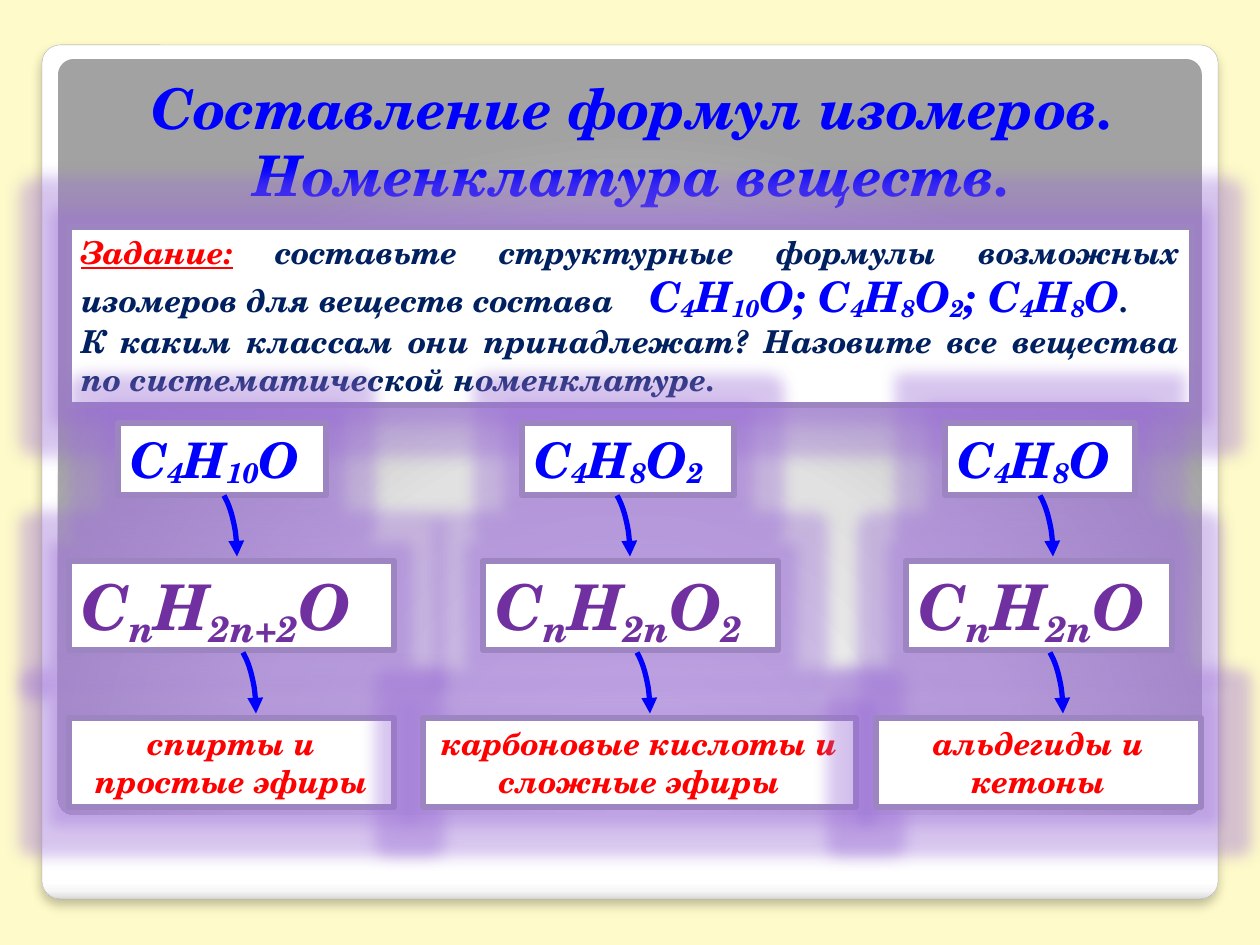
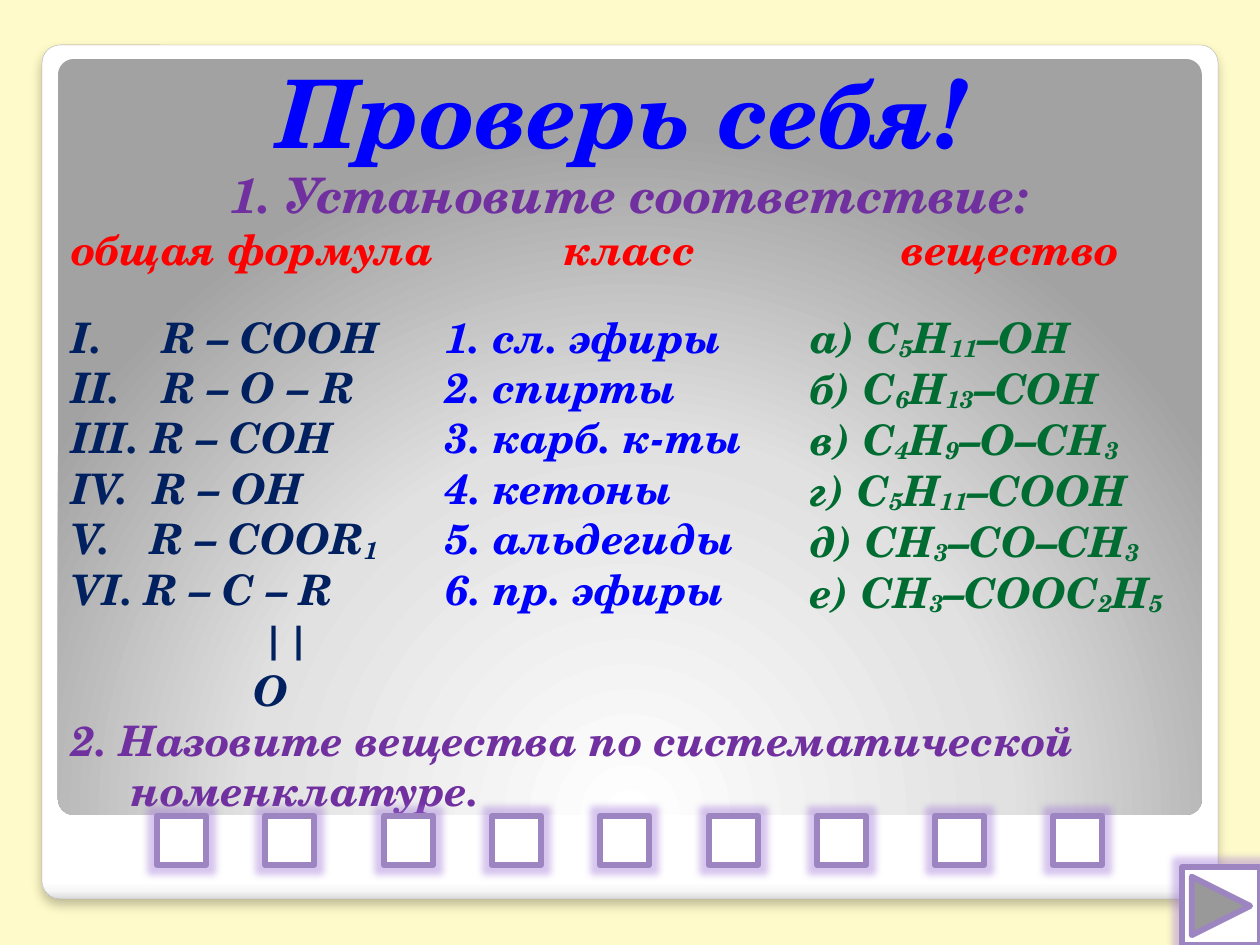
"""Build two chemistry slides: isomer formulas by class, and a matching self-test."""
import pptx
import pptx.dml.color
import pptx.enum.shapes
import pptx.enum.text
import pptx.oxml
import pptx.oxml.ns
import pptx.util

PX_PER_INCH = 126
FONT = "TeX Gyre Schola"
CREAM, WHITE, LILAC, GLOW, EDGE = "FEFAC9", "FFFFFF", "9C85C0", "9B6FD6", "A4A4A4"
BLUE, NAVY, VIOLET, RED, GREEN = "0000FF", "002060", "7030A0", "FF0000", "006C31"
KIND = pptx.enum.shapes.MSO_SHAPE
ALIGN = {
    "left": pptx.enum.text.PP_ALIGN.LEFT,
    "center": pptx.enum.text.PP_ALIGN.CENTER,
    "justify": pptx.enum.text.PP_ALIGN.JUSTIFY,
}

PANEL = (42, 45, 1176, 854)
BAND = (58, 59, 1144, 756)
PANEL_STOPS = [(0, "FFFFFF"), (98, "FFFFFF"), (99, "F7F7F7"), (100, "DADADA")]
BAND_STOPS = [(0, "FFFFFF"), (55, "E1E1E1"), (100, "A2A2A2")]

ISOMERS_TITLE = "Составление формул изомеров. Номенклатура веществ."
TASK = [
    [
        ("Задание:", {"color": RED, "underline": True}),
        (" составьте структурные формулы возможных изомеров для веществ состава\t", {}),
        ("С_4_Н_10_О; С_4_Н_8_О_2_; С_4_Н_8_О", {"size": 24, "color": BLUE}),
        (".", {}),
    ],
    "К каким классам они принадлежат? Назовите все вещества по систематической номенклатуре.",
]
CARD_ROWS = [
    {
        "top": 423, "height": 72,
        "cards": [(118, 208, "С_4_Н_10_О"), (522, 212, "С_4_Н_8_О_2_"), (945, 190, "С_4_Н_8_О")],
        "look": {"size": 28, "color": BLUE},
    },
    {
        "top": 561, "height": 89,
        "cards": [(69, 325, "С_n_H_2n+2_O"), (483, 295, "С_n_H_2n_O_2_"), (906, 266, "С_n_H_2n_O")],
        "look": {"size": 36, "color": VIOLET, "base": -20},
    },
    {
        "top": 718, "height": 89,
        "cards": [
            (69, 325, "спирты и простые эфиры"),
            (423, 433, "карбоновые кислоты и сложные эфиры"),
            (876, 325, "альдегиды и кетоны"),
        ],
        "look": {"size": 18, "color": RED, "align": "center"},
    },
]
ARROW_ROWS = [(483, (178, 571, 994)), (640, (197, 591, 1004))]

TEST_TITLE = "Проверь себя!"
MATCHING = "1. Установите соответствие:"
HEADINGS = "общая формула\tкласс\tвещество"
GENERAL_FORMULAS = [
    ("R – COOH", 91), ("R – O – R", 91), ("R – COH", 80),
    ("R – OH", 82), ("R – COOR_1_", 79), ("R – C – R", 73),
]
KETONE_TAIL = [("||", 190), ("O", 182)]
CLASSES = ["сл. эфиры", "спирты", "карб. к-ты", "кетоны", "альдегиды", "пр. эфиры"]
SUBSTANCES = [
    "а) С_5_Н_11_–ОН", "б) С_6_Н_13_–СОН", "в) С_4_Н_9_–О–СН_3_",
    "г) С_5_Н_11_–СООН", "д) СН_3_–СО–СН_3_", "е) СН_3_–СООС_2_Н_5_",
]
NAMING = ["2. Назовите вещества по систематической", "номенклатуре."]
BUTTON_LEFTS = [157, 265, 384, 492, 600, 709, 817, 935, 1053]


def px(length):
    return pptx.util.Emu(round(length * 914400 / PX_PER_INCH))


def rgb(color):
    return pptx.dml.color.RGBColor.from_string(color)


def xml(markup):
    """Parse one DrawingML element written with its namespace slot as NS."""
    return pptx.oxml.parse_xml(markup.replace("NS", pptx.oxml.ns.nsdecls("a"), 1))


def add_effect(shape, markup):
    shape.shadow.inherit = False
    shape.element.spPr.find(pptx.oxml.ns.qn("a:effectLst")).append(xml(markup))


def add_glow(shape, points):
    add_effect(shape, f'<a:glow NS rad="{points * 12700}"><a:srgbClr val="{GLOW}">'
                      '<a:alpha val="40000"/></a:srgbClr></a:glow>')


def add_shape(slide, kind, box, fill=None, line=None, weight=1):
    shape = slide.shapes.add_shape(kind, *map(px, box))
    shape.shadow.inherit = False
    if fill:
        shape.fill.solid()
        shape.fill.fore_color.rgb = rgb(fill)
    else:
        shape.fill.background()
    if line:
        shape.line.color.rgb = rgb(line)
        shape.line.width = pptx.util.Pt(weight)
    else:
        shape.line.fill.background()
    return shape


def add_framed(slide, kind, box, glow):
    shape = add_shape(slide, kind, box, WHITE, LILAC, 3.35)
    add_glow(shape, glow)
    return shape


def add_rounded(slide, box, stops, direction, line=None):
    shape = add_shape(slide, KIND.ROUNDED_RECTANGLE, box, line=line, weight=0.16)
    shape.adjustments[0] = 0.021
    spots = "".join(f'<a:gs pos="{at * 1000}"><a:srgbClr val="{color}"/></a:gs>' for at, color in stops)
    properties = shape.element.spPr
    plain = properties.find(pptx.oxml.ns.qn("a:noFill"))
    properties.replace(plain, xml(f"<a:gradFill NS><a:gsLst>{spots}</a:gsLst>{direction}</a:gradFill>"))
    return shape


def write(shape, lines, size, color, align="left", base=-10, anchor="TOP"):
    """Write paragraphs of text or (text, look) parts; underscores enclose subscripts."""
    frame = shape.text_frame
    frame.word_wrap = True
    frame.auto_size = pptx.enum.text.MSO_AUTO_SIZE.NONE
    frame.vertical_anchor = pptx.enum.text.MSO_ANCHOR[anchor]
    for number, line in enumerate(lines):
        paragraph = frame.add_paragraph() if number else frame.paragraphs[0]
        paragraph.alignment = ALIGN[align]
        for text, look in [(line, {})] if isinstance(line, str) else line:
            for turn, piece in enumerate(text.split("_")):
                if not piece:
                    continue
                run = paragraph.add_run()
                run.text = piece
                font = run.font
                font.name, font.bold, font.italic = FONT, True, True
                font.size = pptx.util.Pt(look.get("size", size))
                font.color.rgb = rgb(look.get("color", color))
                font.underline = look.get("underline")
                if turn % 2:
                    font._element.set("baseline", str(base * 1000))
    return frame.paragraphs


def add_text(slide, box, lines, **look):
    return write(slide.shapes.add_textbox(*map(px, box)), lines, **look)


def set_title(slide, text, box, size):
    title = slide.shapes.title
    title.left, title.top, title.width, title.height = map(px, box)
    write(title, [text], size=size, color=BLUE, align="center", anchor="BOTTOM")


def indent(paragraph, left, numbering=None):
    properties = paragraph._p.get_or_add_pPr()
    properties.set("marL", str(px(left)))
    properties.set("indent", str(-px(left) if numbering else 0))
    if numbering:
        properties.append(xml(f'<a:buAutoNum NS type="{numbering}"/>'))


def set_tabs(paragraph, *stops):
    tabs = "".join(f'<a:tab pos="{px(stop)}" algn="l"/>' for stop in stops)
    paragraph._p.get_or_add_pPr().append(xml(f"<a:tabLst NS>{tabs}</a:tabLst>"))


def add_arrow(slide, left, top):
    arrow = add_shape(slide, KIND.ARC, (left, top, 59, 147), line=BLUE, weight=3)
    arrow.adjustments[0], arrow.adjustments[1] = 171.063, 0
    arrow.line._get_or_add_ln().append(xml('<a:tailEnd NS type="triangle"/>'))


def dress_layout(layout, slide):
    """Give the layout its background, white panel and grey band."""
    layout.background.fill.solid()
    layout.background.fill.fore_color.rgb = rgb(CREAM)
    panel = add_rounded(slide, PANEL, PANEL_STOPS, '<a:lin ang="5400000" scaled="0"/>', EDGE)
    add_effect(panel, '<a:outerShdw NS blurRad="76200" dist="50800" dir="5400000">'
                      '<a:srgbClr val="000000"><a:alpha val="25000"/></a:srgbClr></a:outerShdw>')
    band = add_rounded(slide, BAND, BAND_STOPS, '<a:path path="circle"><a:fillToRect '
                       'l="50000" t="175000" r="50000" b="-75000"/></a:path>')
    for place, part in enumerate((panel, band), start=2):
        layout.shapes.element.insert(place, part.element)


def build_isomers(slide):
    set_title(slide, ISOMERS_TITLE, (69, 69, 1128, 145), 32)
    task = add_framed(slide, KIND.RECTANGLE, (69, 227, 1123, 178), 18)
    set_tabs(write(task, TASK, size=18, color=NAVY, align="justify")[0], 568)
    for row in CARD_ROWS:
        for left, width, text in row["cards"]:
            card = add_framed(slide, KIND.RECTANGLE, (left, row["top"], width, row["height"]), 18)
            write(card, [text], **row["look"])
    for top, lefts in ARROW_ROWS:
        for left in lefts:
            add_arrow(slide, left, top)


def build_test(slide):
    set_title(slide, TEST_TITLE, (59, 29, 1128, 145), 54)
    add_text(slide, (59, 158, 1142, 72), [MATCHING], size=28, color=VIOLET, align="center")
    headings = add_text(slide, (59, 217, 1142, 64), [HEADINGS], size=24, color=RED)
    set_tabs(headings[0], 493, 830)
    rows = GENERAL_FORMULAS + KETONE_TAIL
    formulas = add_text(slide, (59, 305, 344, 420), [text for text, _ in rows], size=24, color=NAVY)
    for number, (formula, (_, left)) in enumerate(zip(formulas, rows)):
        indent(formula, left, "romanUcPeriod" if number < len(GENERAL_FORMULAS) else None)
    for name in add_text(slide, (433, 305, 344, 318), CLASSES, size=24, color=BLUE):
        indent(name, 48, "arabicPeriod")
    add_text(slide, (798, 305, 413, 318), SUBSTANCES, size=24, color=GREEN)
    naming = add_text(slide, (59, 708, 1142, 115), NAMING, size=24, color=VIOLET)
    indent(naming[1], 60)
    for left in BUTTON_LEFTS:
        add_framed(slide, KIND.ACTION_BUTTON_CUSTOM, (left, 816, 49, 49), 8)
    add_framed(slide, KIND.ACTION_BUTTON_FORWARD_OR_NEXT, (1182, 867, 78, 78), 8)


def main():
    deck = pptx.Presentation()
    deck.slide_width, deck.slide_height = px(1260), px(945)
    layout = deck.slide_layouts[5]
    isomers, test = (deck.slides.add_slide(layout) for _ in range(2))
    dress_layout(layout, isomers)
    build_isomers(isomers)
    build_test(test)
    deck.save("out.pptx")


if __name__ == "__main__":
    main()
